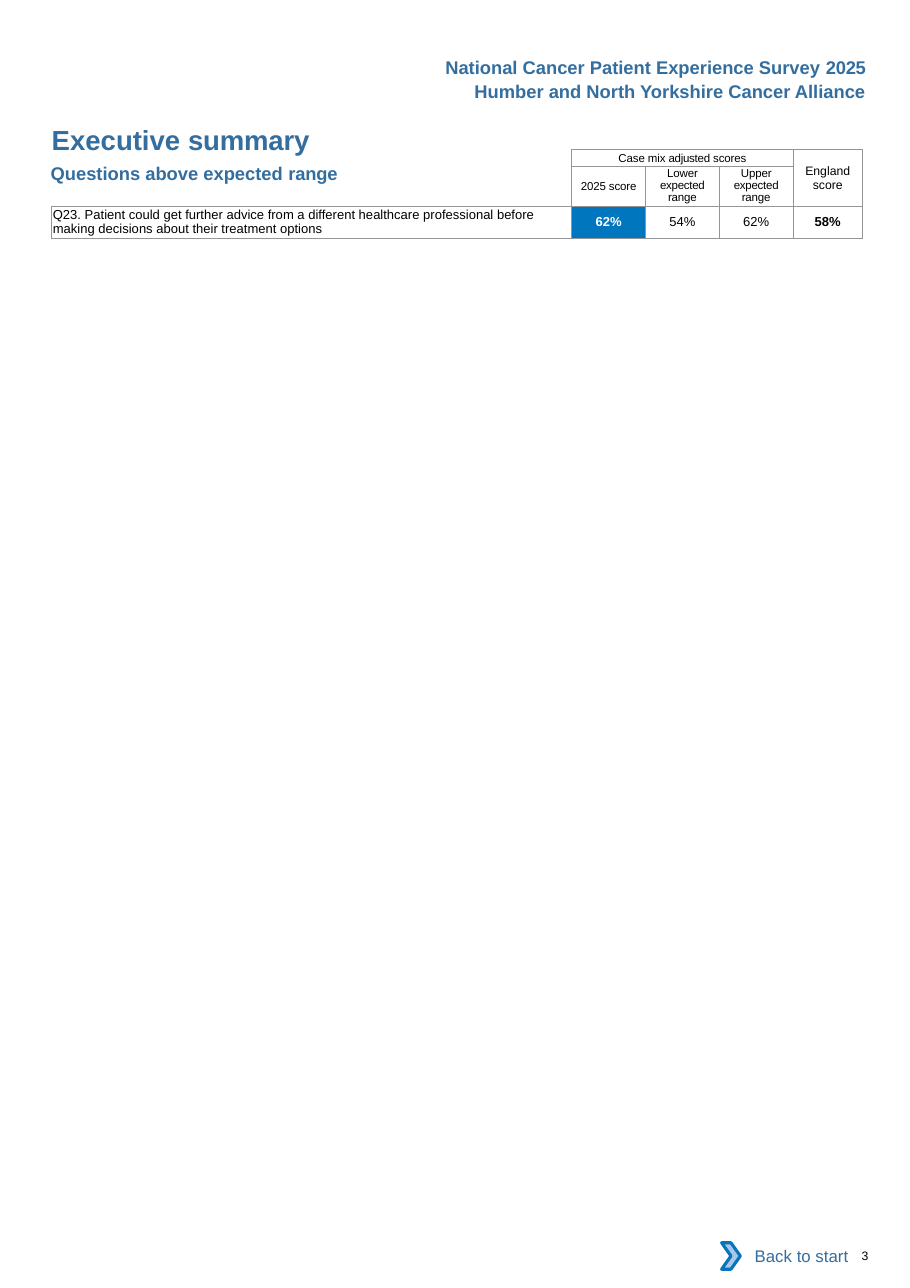
"""Executive summary page: questions above the expected range."""
from lxml import etree
from pptx import Presentation
from pptx import util as u
from pptx.dml.color import RGBColor
from pptx.enum import shapes, text
from pptx.oxml.ns import qn

BLUE = RGBColor(0x33, 0x6E, 0x9F)
CHEVRON_FILL = RGBColor(0xA8, 0xC7, 0xE9)
CHEVRON_LINE = RGBColor(0x0A, 0x74, 0xBB)
HIGHLIGHT = RGBColor(0x00, 0x76, 0xBE)
WHITE = RGBColor(0xFF, 0xFF, 0xFF)
BLACK = RGBColor(0, 0, 0)
BORDER = "939598"
LEFT, CENTER, RIGHT = text.PP_ALIGN.LEFT, text.PP_ALIGN.CENTER, text.PP_ALIGN.RIGHT
GRID = u.Inches(0.01)
COLS, ROWS = 826, 1169

prs = Presentation()
prs.slide_width, prs.slide_height = COLS * GRID, ROWS * GRID
s = prs.slides.add_slide(prs.slide_layouts[6])


def write(tf, runs, size, color, bold=False, align=LEFT):
    """Fill the first paragraph from (text, spacing) pairs."""
    tf.word_wrap = True
    p = tf.paragraphs[0]
    p.alignment = align
    for words, spacing in runs:
        r = p.add_run()
        r.text = words
        r.font.name, r.font.size, r.font.bold = "Arial", u.Pt(size), bold
        r.font.color.rgb = color
        if spacing:
            r.font._element.set("spc", str(spacing))
    return p


labels = [
    (782, 1133, 41, 13, [("3", -20)], 8, BLACK, False, LEFT),
    (47, 112, 264, 30, [("Executive ", 0), ("summary", -10)], 18, BLUE, True, LEFT),
    (46, 147, 301, 20, [("Questions above expected ", 0), ("range", -10)], 12, BLUE, True, LEFT),
    (366, 73, 420, 20, [("Humber and North Yorkshire Cancer Alliance", 0)], 12, BLUE, True, RIGHT),
    (366, 51, 420, 20, [("National Cancer Patient Experience Survey ", 0), ("2025", -20)],
     12, BLUE, True, RIGHT),
]
for x, y, w, h, *style in labels:
    tf = s.shapes.add_textbox(x * GRID, y * GRID, w * GRID, h * GRID).text_frame
    tf.margin_left = tf.margin_top = tf.margin_right = tf.margin_bottom = 0
    write(tf, *style)

back = s.shapes.add_group_shape()
sp = back.shapes.add_shape(shapes.MSO_SHAPE.RECTANGLE, 662 * GRID, 1119 * GRID, 118 * GRID, 42 * GRID)
sp.shadow.inherit = False
sp.fill.solid()
sp.fill.fore_color.rgb = WHITE
sp.line.fill.background()
sp.text_frame.vertical_anchor = text.MSO_ANCHOR.MIDDLE
write(sp.text_frame, [("Back to start", 0)], 11, BLUE, align=RIGHT)

chevron = back.shapes.add_shape(shapes.MSO_SHAPE.CHEVRON, 655 * GRID, 1128 * GRID, 17 * GRID, 24 * GRID)
chevron.shadow.inherit = False
chevron.fill.solid()
chevron.fill.fore_color.rgb = CHEVRON_FILL
chevron.line.color.rgb = CHEVRON_LINE
chevron.line.width = u.Pt(2)

widths, heights = [472, 67, 67, 67, 63], [15, 36, 29]
frame = s.shapes.add_table(len(heights), len(widths), 47 * GRID, 136 * GRID,
                           sum(widths) * GRID, sum(heights) * GRID)
table = frame.table
table.first_row = table.horz_banding = False
for column, w in zip(table.columns, widths):
    column.width = w * GRID
for row, h in zip(table.rows, heights):
    row.height = h * GRID

question = ("Q23. Patient could get further advice from a different healthcare professional "
            "before making decisions about their treatment options")
contents = {
    (0, 1): [("Case mix ", -10), ("adjusted", -20), (" scores", -10)],
    (0, 4): [("England score", 0)],
    (1, 1): [("2025 score", -10)],
    (1, 2): [("Lower ", -10), ("expected", -20), (" range", -10)],
    (1, 3): [("Upper ", -10), ("expected", -20), (" range", -10)],
    (2, 0): [(question, 0)],
    (2, 1): [("62%", 0)],
    (2, 2): [("54%", 0)],
    (2, 3): [("62%", 0)],
    (2, 4): [("58%", 0)],
}
line_spacing = {(0, 1): 9, (1, 2): 7.6, (1, 3): 7.6}

for i in range(len(heights)):
    for j in range(len(widths)):
        cell = table.cell(i, j)
        cell.margin_left = cell.margin_right = GRID if j == 0 else 0
        cell.margin_top = cell.margin_bottom = 0
        cell.vertical_anchor = text.MSO_ANCHOR.MIDDLE
        tcPr = cell._tc.get_or_add_tcPr()
        open_corner = j == 0 and i < 2
        for side in ("lnL", "lnR", "lnT", "lnB"):
            ln = etree.SubElement(tcPr, qn("a:" + side), w=str(u.Pt(0.5)))
            if open_corner and (side in ("lnL", "lnT") or (side == "lnB" and i == 0)):
                etree.SubElement(ln, qn("a:noFill"))
            else:
                fill = etree.SubElement(ln, qn("a:solidFill"))
                etree.SubElement(fill, qn("a:srgbClr"), val=BORDER)
        highlighted = (i, j) == (2, 1)
        if highlighted:
            cell.fill.solid()
            cell.fill.fore_color.rgb = HIGHLIGHT
        else:
            cell.fill.background()
        if (i, j) in contents:
            p = write(cell.text_frame, contents[i, j], 8.5 if i == 2 else 8 if j == 4 else 7.5,
                      WHITE if highlighted else BLACK, i == 2 and j in (1, 4),
                      LEFT if j == 0 else CENTER)
            if (i, j) in line_spacing:
                p.line_spacing = u.Pt(line_spacing[i, j])
        else:
            cell.text_frame.paragraphs[0].font.size = u.Pt(7.5)

for first, last in [((0, 0), (1, 0)), ((0, 1), (0, 3)), ((0, 4), (1, 4))]:
    table.cell(*first).merge(table.cell(*last))

prs.save("out.pptx")
